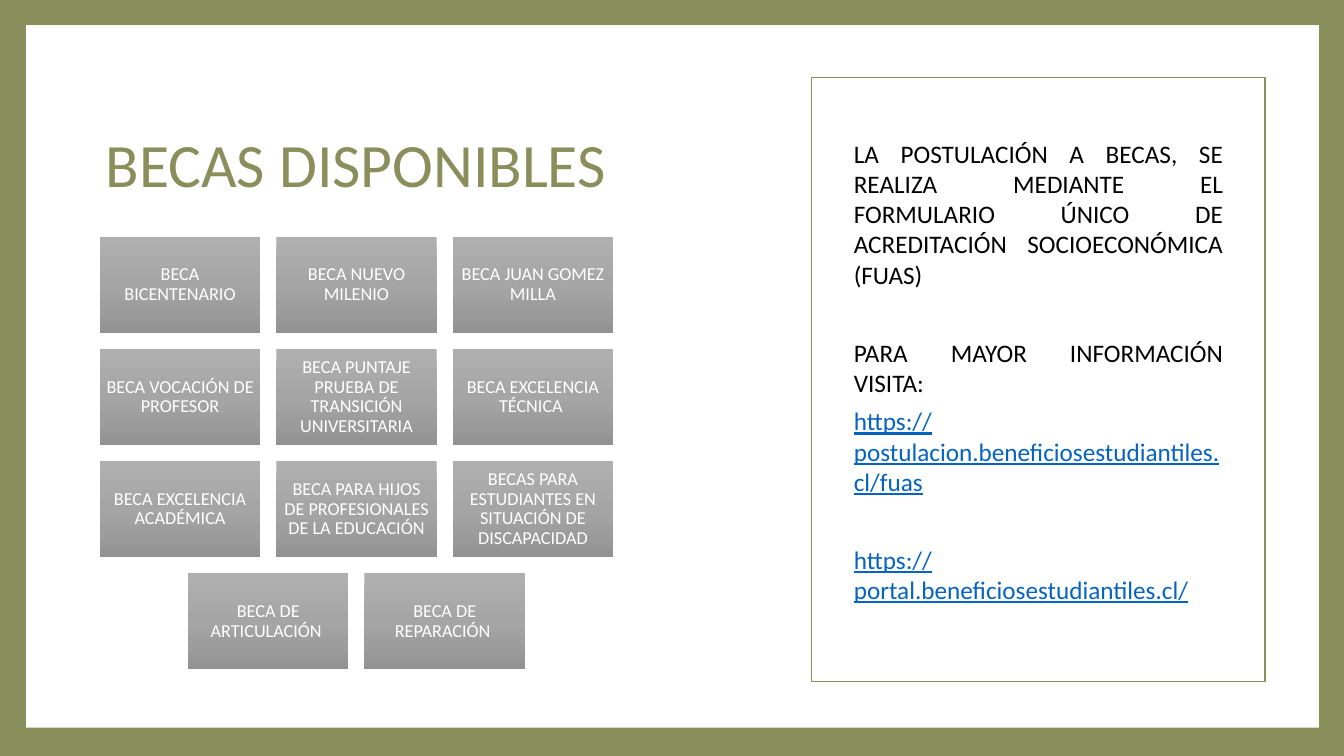
from copy import deepcopy
from dataclasses import dataclass

from pptx import Presentation
from pptx.dml.color import RGBColor
from pptx.enum.shapes import MSO_SHAPE
from pptx.enum.text import MSO_ANCHOR, PP_ALIGN
from pptx.shapes.autoshape import Shape
from pptx.slide import Slide
from pptx.text.text import _Paragraph
from pptx.util import Inches, Pt

RECTANGLE = MSO_SHAPE.RECTANGLE
MIDDLE = MSO_ANCHOR.MIDDLE
CENTER = PP_ALIGN.CENTER
JUSTIFY = PP_ALIGN.JUSTIFY

FONT = "Calibri"
OLIVE = "898E5B"
WHITE = "FFFFFF"
BLACK = "000000"
LINK_BLUE = "0563C1"
CARD_GRADIENT = ((0, "AFAFAF"), (0.5, "A5A5A5"), (1, "939393"))

CARD_WIDTH, CARD_HEIGHT = 1.59, 0.95
COLUMN_STEP, ROW_STEP = 1.75, 1.113
GRID_CENTER, GRID_TOP = 3.535, 2.35
BLANK_LINE = 28


@dataclass(frozen=True)
class Box:
    left: float
    top: float
    width: float
    height: float


@dataclass(frozen=True)
class InfoParagraph:
    text: str
    space_before: float = 0
    is_link: bool = False


SCHOLARSHIP_ROWS = (
    ("BECA BICENTENARIO", "BECA NUEVO MILENIO", "BECA JUAN GOMEZ MILLA"),
    (
        "BECA VOCACIÓN DE PROFESOR",
        "BECA PUNTAJE PRUEBA DE TRANSICIÓN UNIVERSITARIA",
        "BECA EXCELENCIA TÉCNICA ",
    ),
    (
        "BECA EXCELENCIA ACADÉMICA",
        "BECA PARA HIJOS DE PROFESIONALES DE LA EDUCACIÓN",
        "BECAS PARA ESTUDIANTES EN SITUACIÓN DE DISCAPACIDAD",
    ),
    ("BECA DE ARTICULACIÓN ", "BECA DE REPARACIÓN "),
)

INFO_PARAGRAPHS = (
    InfoParagraph(
        "LA POSTULACIÓN A BECAS, SE REALIZA MEDIANTE EL FORMULARIO ÚNICO "
        "DE ACREDITACIÓN SOCIOECONÓMICA (FUAS)"
    ),
    InfoParagraph("PARA MAYOR INFORMACIÓN VISITA:", BLANK_LINE),
    InfoParagraph("https://postulacion.beneficiosestudiantiles.cl/fuas", is_link=True),
    InfoParagraph("https://portal.beneficiosestudiantiles.cl/", BLANK_LINE, True),
)


def color(value: str) -> RGBColor:
    return RGBColor.from_string(value)


def add_rectangle(slide: Slide, box: Box, fill: str, line: str | None = None) -> Shape:
    shape = slide.shapes.add_shape(
        RECTANGLE, Inches(box.left), Inches(box.top), Inches(box.width), Inches(box.height)
    )
    shape.shadow.inherit = False
    shape.fill.solid()
    shape.fill.fore_color.rgb = color(fill)
    if line:
        shape.line.color.rgb = color(line)
        shape.line.width = Pt(1.25)
    else:
        shape.line.fill.background()
    return shape


def add_text_box(slide: Slide, box: Box) -> Shape:
    shape = slide.shapes.add_textbox(
        Inches(box.left), Inches(box.top), Inches(box.width), Inches(box.height)
    )
    shape.text_frame.word_wrap = True
    return shape


def format_runs(paragraph: _Paragraph, size: float, text_color: str) -> None:
    for run in paragraph.runs:
        run.font.name = FONT
        run.font.size = Pt(size)
        run.font.color.rgb = color(text_color)


def apply_card_gradient(shape: Shape) -> None:
    shape.fill.gradient()
    shape.fill.gradient_angle = 270
    first_stop = shape.fill._fill._gradFill.gsLst[0]
    first_stop.addnext(deepcopy(first_stop))
    for stop, (position, value) in zip(shape.fill.gradient_stops, CARD_GRADIENT):
        stop.position = position
        stop.color.rgb = color(value)


def add_scholarship_card(slide: Slide, box: Box, text: str) -> None:
    shape = add_rectangle(slide, box, CARD_GRADIENT[1][1])
    apply_card_gradient(shape)
    frame = shape.text_frame
    frame.text = text
    frame.word_wrap = True
    frame.vertical_anchor = MIDDLE
    frame.margin_left = frame.margin_right = Inches(0.05)
    frame.margin_top = frame.margin_bottom = Inches(0.05)
    paragraph = frame.paragraphs[0]
    paragraph.alignment = CENTER
    paragraph.line_spacing = 0.9
    format_runs(paragraph, 13, WHITE)


def add_scholarship_grid(slide: Slide) -> None:
    for row, names in enumerate(SCHOLARSHIP_ROWS):
        row_width = (len(names) - 1) * COLUMN_STEP + CARD_WIDTH
        row_left = GRID_CENTER - row_width / 2
        for column, name in enumerate(names):
            box = Box(
                row_left + column * COLUMN_STEP,
                GRID_TOP + row * ROW_STEP,
                CARD_WIDTH,
                CARD_HEIGHT,
            )
            add_scholarship_card(slide, box, name)


def add_title(slide: Slide) -> None:
    frame = add_text_box(slide, Box(0.95, 0.94, 6.57, 1.45)).text_frame
    frame.text = "BECAS DISPONIBLES"
    frame.vertical_anchor = MIDDLE
    paragraph = frame.paragraphs[0]
    paragraph.line_spacing = 0.9
    format_runs(paragraph, 44, OLIVE)


def add_application_info(slide: Slide) -> None:
    frame = add_text_box(slide, Box(8.37, 1.32, 3.86, 4.85)).text_frame
    frame.text = "\n".join(info.text for info in INFO_PARAGRAPHS)
    for paragraph, info in zip(frame.paragraphs, INFO_PARAGRAPHS):
        paragraph.alignment = JUSTIFY
        paragraph.space_before = Pt(info.space_before)
        paragraph.space_after = Pt(6)
        format_runs(paragraph, 18, LINK_BLUE if info.is_link else BLACK)
        if info.is_link:
            paragraph.runs[0].font.underline = True


def main() -> None:
    presentation = Presentation()
    presentation.slide_width = Inches(13.33)
    presentation.slide_height = Inches(7.5)
    slide = presentation.slides.add_slide(presentation.slide_layouts[6])
    add_rectangle(slide, Box(0, 0, 13.33, 7.5), OLIVE)
    add_rectangle(slide, Box(0.26, 0.25, 12.82, 6.97), WHITE)
    add_title(slide)
    add_rectangle(slide, Box(8.05, 0.77, 4.5, 5.99), WHITE, OLIVE)
    add_scholarship_grid(slide)
    add_application_info(slide)
    presentation.save("out.pptx")


if __name__ == "__main__":
    main()
